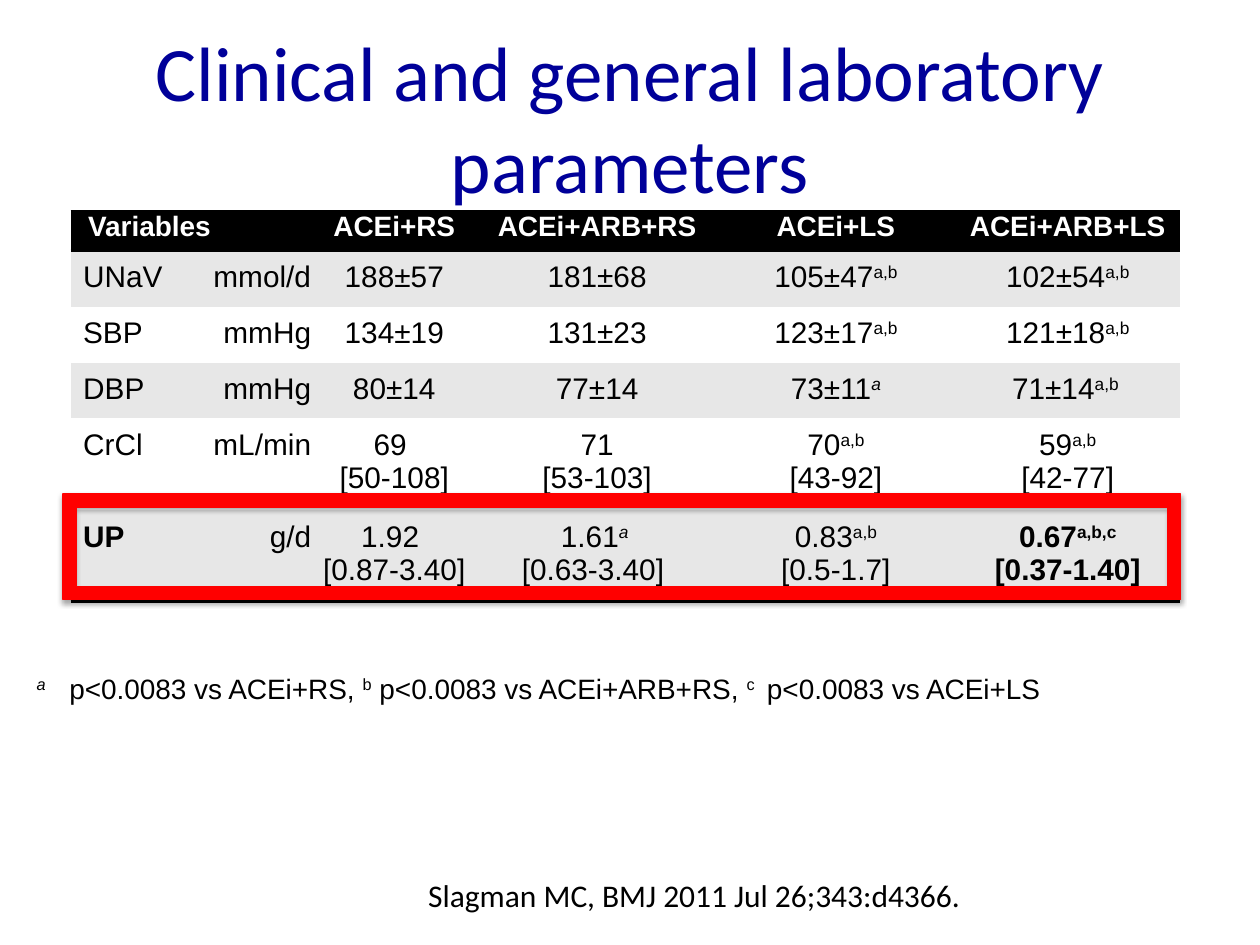
from dataclasses import dataclass

from lxml.etree import SubElement
from pptx import Presentation
from pptx.dml.color import RGBColor
from pptx.enum.shapes import MSO_SHAPE
from pptx.enum.text import MSO_ANCHOR, PP_ALIGN
from pptx.oxml import parse_xml
from pptx.oxml.ns import nsdecls, qn
from pptx.util import Emu, Inches, Pt

NAVY = RGBColor(0x00, 0x00, 0x99)
BLACK = RGBColor(0x00, 0x00, 0x00)
WHITE = RGBColor(0xFF, 0xFF, 0xFF)
GREY = RGBColor(0xE7, 0xE7, 0xE7)
RED = RGBColor(0xFF, 0x00, 0x00)

SLIDE_WIDTH, SLIDE_HEIGHT = Inches(10), Inches(7.5)
PLAIN_TABLE = "{2D5ABB26-0587-4C30-8999-92F81FD0307C}"
COLUMN_WIDTHS = (0.88, 1.03, 1.32, 1.9, 1.89, 1.79)
ROW_HEIGHTS = (0.31,) + (0.37,) * 5


@dataclass(frozen=True)
class Area:
    """Shares of the slide in percent."""
    left: float
    top: float
    width: float
    height: float

    def box(self) -> tuple:
        return tuple(
            Emu(int(side * share / 100))
            for side, share in zip(
                (SLIDE_WIDTH, SLIDE_HEIGHT) * 2,
                (self.left, self.top, self.width, self.height),
            )
        )


@dataclass(frozen=True)
class Style:
    size: float
    color: RGBColor = BLACK
    name: str = "Arial"
    bold: bool = False
    align: PP_ALIGN = PP_ALIGN.LEFT


@dataclass(frozen=True)
class Measure:
    variable: str
    unit: str
    values: tuple
    key: bool = False


GROUPS = ("ACEi+RS", "ACEi+ARB+RS", "ACEi+LS", "ACEi+ARB+LS")
MEASURES = (
    Measure("UNaV", "mmol/d", ("188±57", "181±68", "105±47|a,b", "102±54|a,b")),
    Measure("SBP", "mmHg", ("134±19", "131±23", "123±17|a,b", "121±18|a,b")),
    Measure("DBP", "mmHg", ("80±14", "77±14", "73±11|a", "71±14|a,b ")),
    Measure("CrCl", "mL/min", ("69 \n[50-108]", "71\n[53-103]",
                               "70|a,b\n[43-92]", "59|a,b\n[42-77]")),
    Measure("UP", "g/d", ("1.92 \n[0.87-3.40]", "1.61|a \n[0.63-3.40] ",
                          "0.83|a,b\n[0.5-1.7]", "0.67|a,b,c\n[0.37-1.40]"), True),
)
FOOTNOTE = ("|a|\tp<0.0083 vs ACEi+RS, |b| p<0.0083 vs ACEi+ARB+RS, "
            "|c | p<0.0083 vs ACEi+LS")


def write(frame, text: str, style: Style, tab: float = 0) -> None:
    for index, line in enumerate(text.split("\n")):
        paragraph = frame.paragraphs[0] if index == 0 else frame.add_paragraph()
        paragraph.alignment = style.align
        if tab:
            stops = SubElement(paragraph._p.get_or_add_pPr(), qn("a:tabLst"))
            SubElement(stops, qn("a:tab"), pos=str(Inches(tab)), algn="l")
        for position, part in enumerate(line.split("|")):
            if not part:
                continue
            raised = position % 2 == 1
            run = paragraph.add_run()
            run.text = part
            looks = {"size": Pt(style.size), "name": style.name, "bold": style.bold,
                     "italic": raised and part.strip() == "a"}
            for attribute, value in looks.items():
                setattr(run.font, attribute, value)
            run.font.color.rgb = style.color
            if raised:
                run._r.get_or_add_rPr().set("baseline", "30000")


def add_label(slide, area: Area, text: str, style: Style, anchor: MSO_ANCHOR) -> None:
    frame = slide.shapes.add_textbox(*area.box()).text_frame
    frame.word_wrap = True
    frame.vertical_anchor = anchor
    write(frame, text, style)


def add_plain_table(slide, area: Area, widths: tuple, heights: tuple):
    holder = slide.shapes.add_table(len(heights), len(widths), *area.box())
    table = holder.table
    table.first_row = table.horz_banding = False
    table._tbl.tblPr.find(qn("a:tableStyleId")).text = PLAIN_TABLE
    for column, width in zip(table.columns, widths):
        column.width = Inches(width)
    for row, height in zip(table.rows, heights):
        row.height = Inches(height)
    holder.height = area.box()[3]
    return table


def fill_cell(cell, text: str, style: Style, fill: RGBColor, margins: tuple,
              edges: tuple = ()) -> None:
    sides = ("margin_left", "margin_top", "margin_right", "margin_bottom")
    for side, margin in zip(sides, margins):
        setattr(cell, side, Inches(margin))
    write(cell.text_frame, text, style)
    cell.fill.solid()
    cell.fill.fore_color.rgb = fill
    for index, edge in enumerate(edges):
        cell._tc.get_or_add_tcPr().insert(index, parse_xml(
            f'<a:{edge} {nsdecls("a")} w="{Pt(2)}"><a:solidFill>'
            f'<a:srgbClr val="{BLACK}"/></a:solidFill></a:{edge}>'))


def add_parameters(slide, area: Area) -> None:
    table = add_plain_table(slide, area, COLUMN_WIDTHS, ROW_HEIGHTS)
    table.cell(0, 0).merge(table.cell(0, 1))
    edges = ("lnT", "lnB")
    fill_cell(table.cell(0, 0), "Variables", Style(16, WHITE, bold=True),
              BLACK, (0.14, 0, 0.07, 0), edges)
    for column, group in enumerate(GROUPS, 2):
        fill_cell(table.cell(0, column), group,
                  Style(16, WHITE, bold=True, align=PP_ALIGN.CENTER),
                  BLACK, (0.07, 0, 0.07, 0), edges)
    for row, measure in enumerate(MEASURES, 1):
        fill = GREY if row % 2 else WHITE
        edges = ("lnB",) if row == len(MEASURES) else ()
        fill_cell(table.cell(row, 0), measure.variable, Style(17, bold=measure.key),
                  fill, (0.1, 0.08, 0.07, 0.08), edges)
        fill_cell(table.cell(row, 1), measure.unit, Style(17, align=PP_ALIGN.RIGHT),
                  fill, (0.1, 0.08, 0, 0.08), edges)
        for column, value in enumerate(measure.values, 2):
            strong = measure.key and column == len(COLUMN_WIDTHS) - 1
            fill_cell(table.cell(row, column), value,
                      Style(17, bold=strong, align=PP_ALIGN.CENTER),
                      fill, (0.07, 0.08, 0.07, 0.08), edges)


def add_highlight(slide, area: Area) -> None:
    highlight = slide.shapes.add_shape(MSO_SHAPE.FRAME, *area.box())
    highlight.fill.solid()
    highlight.fill.fore_color.rgb = RED
    highlight.line.color.rgb = RED
    highlight.line.width = Pt(0.75)
    highlight.shadow.inherit = False
    effects = highlight._element.spPr.find(qn("a:effectLst"))
    shadow = SubElement(effects, qn("a:outerShdw"), blurRad=str(Pt(3.1)),
                        dist=str(Pt(1.8)), dir="5400000", rotWithShape="0")
    tint = SubElement(shadow, qn("a:srgbClr"), val=str(BLACK))
    SubElement(tint, qn("a:alpha"), val="35000")


def main() -> None:
    deck = Presentation()
    deck.slide_width, deck.slide_height = SLIDE_WIDTH, SLIDE_HEIGHT
    slide = deck.slides.add_slide(deck.slide_layouts[6])
    add_label(slide, Area(5, 4, 90, 16.67), "Clinical and general laboratory parameters",
              Style(44, NAVY, "Calibri", align=PP_ALIGN.CENTER), MSO_ANCHOR.MIDDLE)
    add_parameters(slide, Area(5.6, 22.4, 88.1, 41.07))
    add_label(slide, Area(33, 92, 70.2, 5.33), "Slagman MC, BMJ 2011 Jul 26;343:d4366.",
              Style(18, name="Calibri"), MSO_ANCHOR.TOP)
    footnote = add_plain_table(slide, Area(1.9, 70.67, 97, 8.4), (9.7,), (0.41,))
    write(footnote.cell(0, 0).text_frame, FOOTNOTE, Style(16), tab=0.26)
    add_highlight(slide, Area(5, 52.27, 88.7, 11.2))
    deck.save("out.pptx")


if __name__ == "__main__":
    main()
